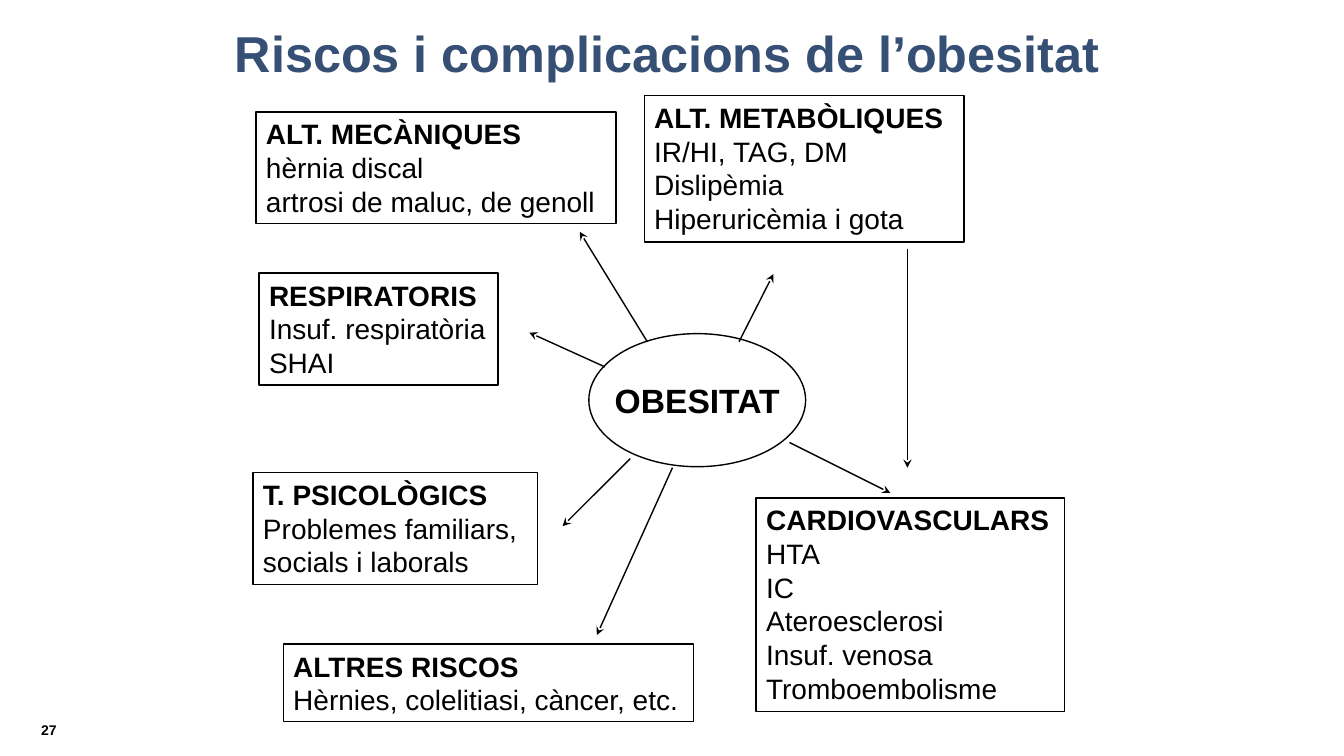
import pptx
import pptx.util
import pptx.dml.color
import pptx.enum.shapes
import pptx.enum.text
import pptx.oxml.ns
from lxml import etree

Inches = pptx.util.Inches
ALIGN = pptx.enum.text.PP_ALIGN
ANCHOR = pptx.enum.text.MSO_ANCHOR
SHAPE = pptx.enum.shapes.MSO_SHAPE
COLORS = {"ink": "000000", "title": "364F74"}


def rgb(name):
    return pptx.dml.color.RGBColor.from_string(COLORS[name])


def write(frame, lines, size, color="ink", align=ALIGN.LEFT, anchor=ANCHOR.TOP):
    """Fill a text frame with one paragraph per line, the first one bold."""
    frame.vertical_anchor = anchor
    for i, line in enumerate(lines):
        paragraph = frame.paragraphs[0] if i == 0 else frame.add_paragraph()
        paragraph.alignment = align
        run = paragraph.add_run()
        run.text = line
        run.font.name = "Arial"
        run.font.size = pptx.util.Pt(size)
        run.font.bold = i == 0
        run.font.color.rgb = rgb(color)


deck = pptx.Presentation()
deck.slide_width, deck.slide_height = Inches(13.33), Inches(7.5)
slide = deck.slides.add_slide(deck.slide_layouts[5])

# Title
title = slide.shapes.title
title.left, title.top = Inches(0.49), Inches(0.12)
title.width, title.height = Inches(12.26), Inches(0.97)
title.text_frame.margin_top = Inches(0.1)
write(title.text_frame, ["Riscos i complicacions de l’obesitat"], 36, "title", ALIGN.CENTER)

# Central topic and the boxes of complications around it
topics = [
    (5.84, 3.31, 2.15, 1.32, ["OBESITAT"]),
    (2.54, 1.11, 3.57, 1.11,
     ["ALT. MECÀNIQUES", "hèrnia discal", "artrosi de maluc, de genoll"]),
    (6.39, 0.95, 3.17, 1.45,
     ["ALT. METABÒLIQUES", "IR/HI, TAG, DM", "Dislipèmia", "Hiperuricèmia i gota"]),
    (7.5, 4.94, 3.06, 2.12,
     ["CARDIOVASCULARS", "HTA", "IC", "Ateroesclerosi", "Insuf. venosa", "Tromboembolisme"]),
    (2.57, 2.71, 2.37, 1.11, ["RESPIRATORIS", "Insuf. respiratòria", "SHAI"]),
    (2.51, 4.69, 2.82, 1.11,
     ["T. PSICOLÒGICS", "Problemes familiars,", "socials i laborals"]),
    (2.81, 6.39, 4.07, 0.77, ["ALTRES RISCOS", "Hèrnies, colelitiasi, càncer, etc."]),
]
for left, top, width, height, lines in topics:
    central = len(lines) == 1
    topic = slide.shapes.add_shape(
        SHAPE.OVAL if central else SHAPE.RECTANGLE,
        Inches(left), Inches(top), Inches(width), Inches(height))
    topic.shadow.inherit = False
    topic.fill.background()
    topic.line.color.rgb = rgb("ink")
    topic.line.width = pptx.util.Pt(1)
    topic.text_frame.word_wrap = not central
    if central:
        write(topic.text_frame, lines, 24, align=ALIGN.CENTER, anchor=ANCHOR.MIDDLE)
    else:
        write(topic.text_frame, lines, 20)

# Arrows, each from its start to its head
arrows = [
    (7.33, 3.39, 7.67, 2.72),
    (7.83, 4.39, 8.83, 4.89),
    (9, 2.47, 9, 4.64),
    (6.42, 3.39, 5.75, 2.3),
    (6.25, 4.55, 5.58, 5.22),
    (6.67, 4.64, 5.92, 6.3),
    (6, 3.64, 5.25, 3.3),
]
for ends in arrows:
    arrow = slide.shapes.add_connector(
        pptx.enum.shapes.MSO_CONNECTOR.STRAIGHT, *[Inches(end) for end in ends])
    arrow.line.color.rgb = rgb("ink")
    arrow.line.width = pptx.util.Pt(1)
    etree.SubElement(arrow.line._get_or_add_ln(), pptx.oxml.ns.qn("a:tailEnd"), type="stealth")
    etree.SubElement(arrow._element.spPr, pptx.oxml.ns.qn("a:effectLst"))

# Slide number
number = slide.shapes.add_textbox(Inches(0.16), Inches(7.11), Inches(0.5), Inches(0.3))
number.text_frame.word_wrap = True
write(number.text_frame, ["27"], 10, align=ALIGN.RIGHT)

deck.save("out.pptx")
